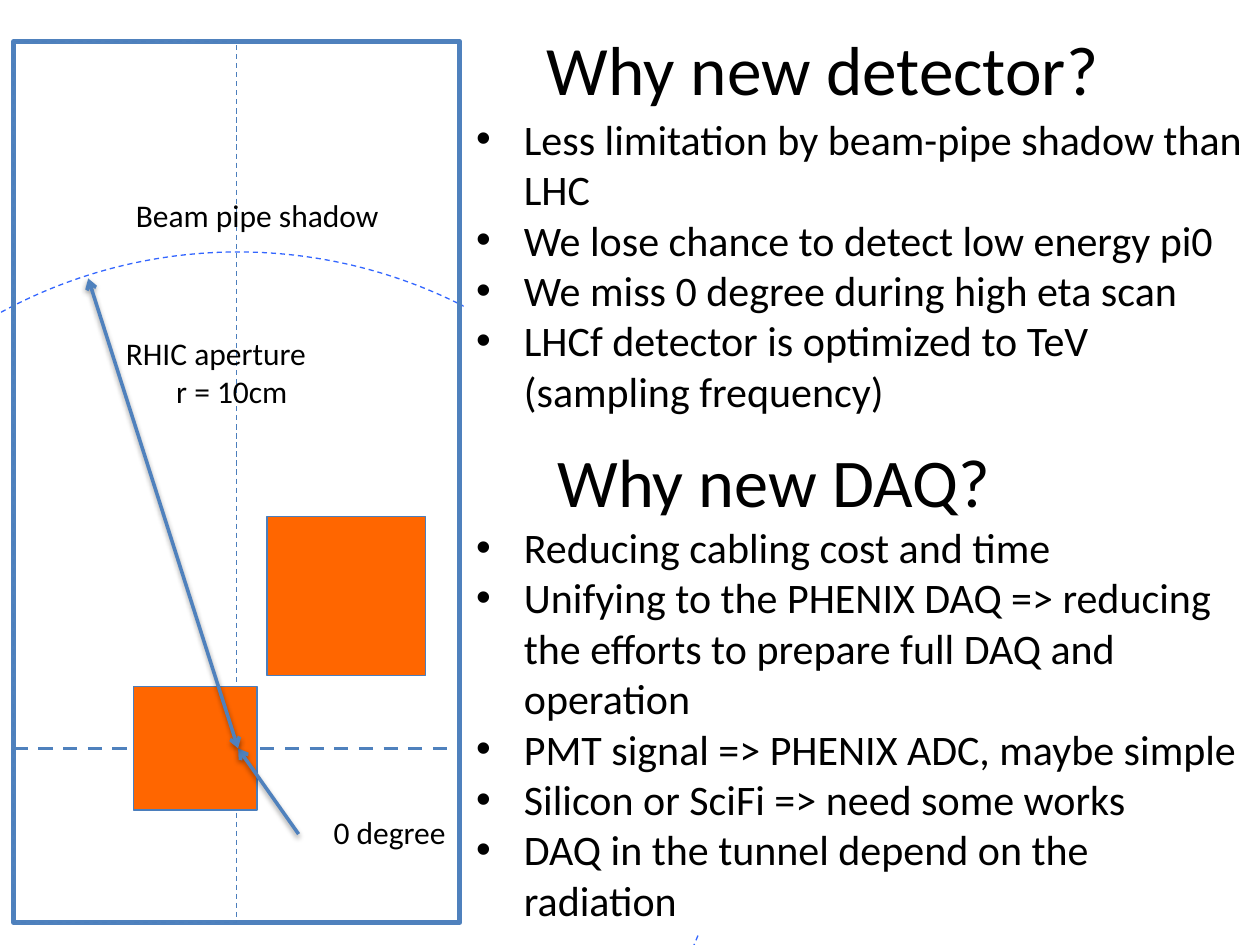
from dataclasses import dataclass

from lxml import etree
from pptx import Presentation
from pptx.dml.color import RGBColor
from pptx.enum.dml import MSO_LINE
from pptx.enum.shapes import MSO_CONNECTOR, MSO_SHAPE
from pptx.enum.text import MSO_ANCHOR, PP_ALIGN
from pptx.oxml.ns import qn
from pptx.util import Inches, Pt

DASH = MSO_LINE.DASH
RECT, OVAL = MSO_SHAPE.RECTANGLE, MSO_SHAPE.OVAL
STRAIGHT = MSO_CONNECTOR.STRAIGHT
TOP, MIDDLE = MSO_ANCHOR.TOP, MSO_ANCHOR.MIDDLE
LEFT, CENTER = PP_ALIGN.LEFT, PP_ALIGN.CENTER


@dataclass(frozen=True)
class Theme:
    font: str = "Calibri"
    text: str = "000000"
    paper: str = "FFFFFF"
    blue: str = "4F81BD"
    edge: str = "4B7EBC"
    arc: str = "3366FF"
    orange: str = "FF6600"
    title: float = 39.6
    second: float = 39
    body: float = 24
    label: float = 18


def put(target, **values):
    for name, value in values.items():
        setattr(target, name, value)


def node(parent, tag, **attrs):
    return etree.SubElement(parent, qn(tag), attrs)


class Deck:
    def __init__(self, theme, slide):
        self.theme, self.slide = theme, slide

    def stroke(self, line, color, width, dash=None):
        line.color.rgb = RGBColor.from_string(color)
        put(line, width=Pt(width), dash_style=dash)

    def shape(self, kind, box, color, width, fill=None, dash=None):
        item = self.slide.shapes.add_shape(kind, *map(Inches, box))
        item.shadow.inherit = False
        if fill:
            item.fill.solid()
            item.fill.fore_color.rgb = RGBColor.from_string(fill)
        else:
            item.fill.background()
        self.stroke(item.line, color, width, dash)

    def line(self, start, end, dash=None, ends=(), shadow=False):
        item = self.slide.shapes.add_connector(
            STRAIGHT, *map(Inches, (*start, *end)))
        self.stroke(item.line, self.theme.blue, 2, dash)
        props = item.element.spPr
        for tag in ends:
            node(props.find(qn("a:ln")), tag, type="arrow")
        effect = node(props, "a:effectLst")
        if shadow:
            cast = node(effect, "a:outerShdw", blurRad=str(Pt(3.1)),
                        dist=str(Pt(1.6)), dir="5400000", rotWithShape="0")
            node(node(cast, "a:srgbClr", val="000000"), "a:alpha", val="38000")

    def text(self, box, lines, size, wrap=True, fill=False,
             anchor=TOP, align=LEFT, bullet=False, indents=()):
        item = self.slide.shapes.add_textbox(*map(Inches, box))
        if fill:
            item.fill.solid()
            item.fill.fore_color.rgb = RGBColor.from_string(self.theme.paper)
        frame = item.text_frame
        put(frame, word_wrap=wrap, vertical_anchor=anchor)
        for i, words in enumerate(lines):
            para = frame.paragraphs[0] if i == 0 else frame.add_paragraph()
            para.alignment = align
            run = para.add_run()
            run.text = words
            put(run.font, name=self.theme.font, size=Pt(size))
            run.font.color.rgb = RGBColor.from_string(self.theme.text)
            props = para._p.get_or_add_pPr()
            if bullet:
                props.set("marL", str(Inches(0.38)))
                props.set("indent", str(-Inches(0.38)))
                node(props, "a:buFont", typeface="Arial")
                node(props, "a:buChar", char="•")
            elif indents:
                props.set("marL", str(Inches(indents[i])))

    def label(self, box, *lines, indents=()):
        self.text(box, lines, self.theme.label, wrap=False, indents=indents)

    def points(self, box, lines):
        self.text(box, lines, self.theme.body, fill=True, bullet=True)


def main():
    show = Presentation()
    put(show, slide_width=Inches(10), slide_height=Inches(7.5))
    look = Theme()
    deck = Deck(look, show.slides.add_slide(show.slide_layouts[6]))

    # First title
    deck.text((4.02, 0.08, 5.02, 0.92), ["Why new detector?"], look.title,
              anchor=MIDDLE, align=CENTER)

    # Aperture circle, centred on the beam
    beam_x, beam_y, radius = 1.89, 5.94, 3.94
    beam = beam_x, beam_y
    deck.shape(OVAL, (beam_x - radius, beam_y - radius, 2 * radius, 2 * radius),
               look.arc, 0.75, dash=DASH)

    # Detector frame with its centre lines
    left, top, width, height = 0.11, 0.33, 3.54, 6.99
    deck.line((left, beam_y), (left + width, beam_y), dash=DASH)
    deck.shape(RECT, (left, top, width, height), look.blue, 3)
    deck.shape(RECT, (left, top, width / 2, height), look.edge, 0.75, dash=DASH)

    # Calorimeter towers
    for x, y, side in ((1.06, 5.45, 0.98), (2.12, 4.1, 1.26)):
        deck.shape(RECT, (x, y, side, side), look.edge, 0.75, fill=look.orange)

    # Arrows to the beam and their labels
    deck.label((2.55, 6.4, 1.1, 0.4), "0 degree")
    deck.line((2.37, 6.62), beam, ends=["a:tailEnd"], shadow=True)
    deck.line((0.7, 2.21), beam, ends=["a:headEnd", "a:tailEnd"], shadow=True)
    deck.label((0.9, 2.6, 1.65, 0.71), "RHIC aperture", "r = 10cm",
               indents=(0, 0.4))
    deck.label((0.98, 1.51, 2.15, 0.4), "Beam pipe shadow")

    # Reasons for the detector
    deck.points((3.68, 0.85, 6.34, 2.52), [
        "Less limitation by beam-pipe shadow than LHC",
        "We lose chance to detect low energy pi0",
        "We miss 0 degree during high eta scan",
        "LHCf detector is optimized to TeV (sampling frequency)",
    ])

    # Reasons for the DAQ
    deck.text((4.02, 3.35, 4.24, 0.92), ["Why new DAQ?"], look.second,
              fill=True, anchor=MIDDLE, align=CENTER)
    deck.points((3.68, 4.09, 6.34, 3.33), [
        "Reducing cabling cost and time",
        "Unifying to the PHENIX DAQ => reducing the efforts to prepare "
        "full DAQ and operation",
        "PMT signal => PHENIX ADC, maybe simple",
        "Silicon or SciFi => need some works",
        "DAQ in the tunnel depend on the radiation",
    ])

    show.save("out.pptx")


if __name__ == "__main__":
    main()
